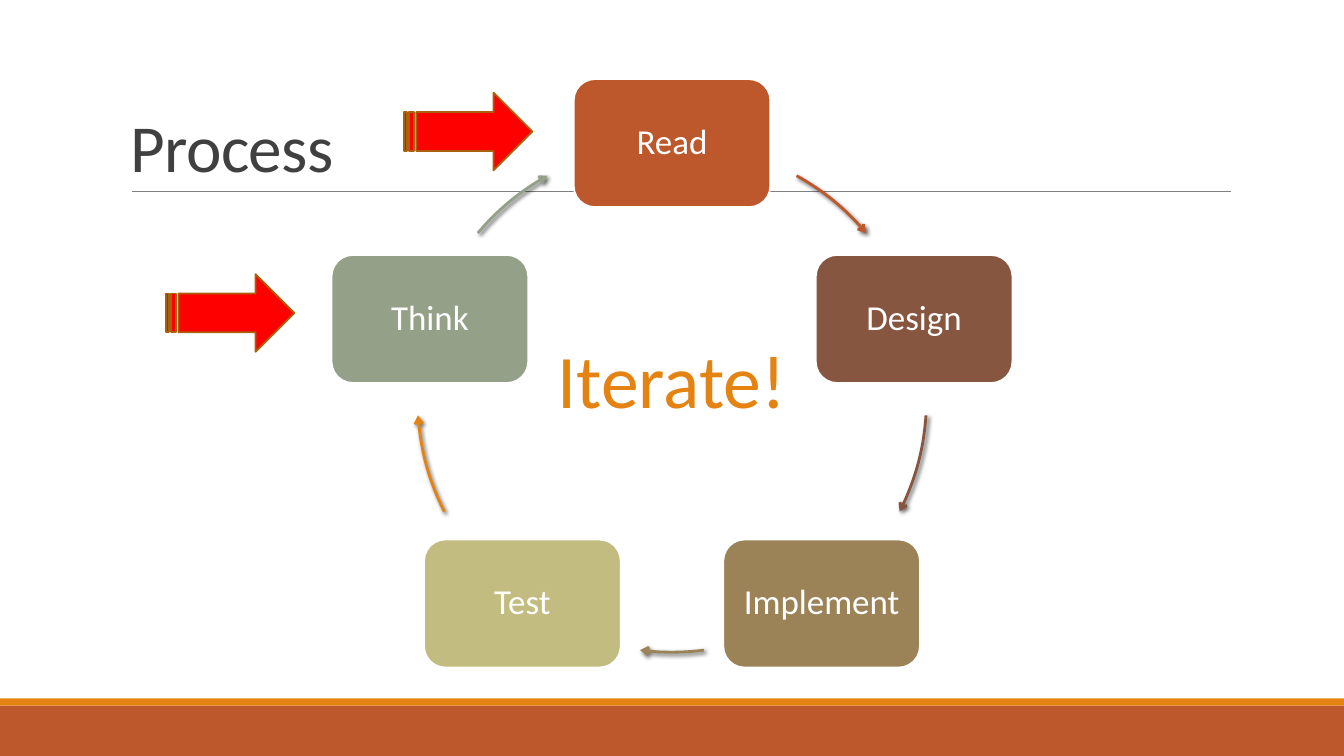
"""Build the Process slide: a five-step cycle with two marker arrows."""
from math import cos, radians, sin

from lxml import etree
from pptx import Presentation, util as u
from pptx.dml.color import RGBColor
from pptx.enum import shapes, text
from pptx.oxml import parse_xml
from pptx.oxml.ns import nsdecls, qn

PX = 9144
RUST = RGBColor(0xBD, 0x58, 0x2C)
BROWN = RGBColor(0x86, 0x56, 0x40)
TAN = RGBColor(0x9B, 0x83, 0x57)
OLIVE = RGBColor(0xC2, 0xBC, 0x80)
SAGE = RGBColor(0x94, 0xA0, 0x88)
ORANGE = RGBColor(0xE4, 0x83, 0x12)
RED = RGBColor(0xFF, 0x00, 0x00)
OCHRE = RGBColor(0xA9, 0x61, 0x0D)
GREY = RGBColor(0x80, 0x80, 0x80)
DARK = RGBColor(0x40, 0x40, 0x40)
WHITE = RGBColor(0xFF, 0xFF, 0xFF)
SHAPE = shapes.MSO_SHAPE
ALIGN = text.PP_ALIGN
ANCHOR = text.MSO_ANCHOR

deck = Presentation()
deck.slide_width, deck.slide_height = 1333 * PX, 750 * PX
slide = deck.slides.add_slide(deck.slide_layouts[6])
tree = slide.shapes


def draw(kind, box, fill, edge=None, width=1.25):
    """Add a shape; a missing fill or edge colour leaves that part clear."""
    shape = tree.add_shape(kind, *(round(n * PX) for n in box))
    shape.shadow.inherit = False
    if fill is None:
        shape.fill.background()
    else:
        shape.fill.solid()
        shape.fill.fore_color.rgb = fill
    if edge is None:
        shape.line.fill.background()
    else:
        shape.line.color.rgb = edge
        shape.line.width = u.Pt(width)
    return shape


def write(shape, words, size, color, align, anchor):
    """Put one styled paragraph in a shape and return it."""
    frame = shape.text_frame
    frame.vertical_anchor = anchor
    para = frame.paragraphs[0]
    para.text = words
    para.alignment = align
    para.font.name = "Calibri"
    para.font.size = u.Pt(size)
    para.font.color.rgb = color
    return para


draw(SHAPE.RECTANGLE, (0, 700, 1333, 50), RUST)
draw(SHAPE.RECTANGLE, (0, 693, 1333, 7), ORANGE)
rule = tree.add_connector(shapes.MSO_CONNECTOR.STRAIGHT,
                          131 * PX, 190 * PX, 1221 * PX, 190 * PX)
rule.line.color.rgb = GREY
rule.line.width = u.Pt(0.5)
etree.SubElement(rule._element.spPr, qn("a:effectLst"))

title = tree.add_textbox(120 * PX, 31 * PX, 1100 * PX, 159 * PX)
title.text_frame.word_wrap = True
para = write(title, "Process", 48, DARK, ALIGN.LEFT, ANCHOR.BOTTOM)
para.line_spacing = 0.85
para.font._element.set("spc", "-50")

LEFT, TOP, SPAN = 414, 142, 505
RADIUS = SPAN / 2
WIDE, HIGH = 195, 127
steps = [
    ("Read", RUST, RUST, 29.3, 49.7),
    ("Design", BROWN, BROWN, 94, 116.6),
    ("Implement", TAN, TAN, 172.8, 187.2),
    ("Test", OLIVE, ORANGE, 243.4, 266),
    ("Think", SAGE, SAGE, 310.3, 330.7),
]
for i, (name, fill, ink, start, end) in enumerate(steps):
    turn = radians(i * 360 / len(steps))
    left = LEFT + RADIUS * (1 + sin(turn)) - WIDE / 2
    top = TOP + RADIUS * (1 - cos(turn)) - HIGH / 2
    card = draw(SHAPE.ROUNDED_RECTANGLE, (left, top, WIDE, HIGH), fill, WHITE)
    frame = card.text_frame
    frame.word_wrap = True
    frame.margin_left = frame.margin_right = 10 * PX
    frame.margin_top = frame.margin_bottom = 10 * PX
    para = write(card, name, 25, WHITE, ALIGN.CENTER, ANCHOR.MIDDLE)
    para.line_spacing = 0.9

    arc = draw(SHAPE.ARC, (LEFT, TOP, SPAN, SPAN), None, ink, 2)
    for n, angle in enumerate((start, end)):
        arc.adjustments[n] = (angle - 90) % 360 * 0.6
    etree.SubElement(arc.line._get_or_add_ln(), qn("a:tailEnd"), type="arrow")
    arc._element.spPr.find(qn("a:effectLst")).append(parse_xml(
        f'<a:outerShdw {nsdecls("a")} blurRad="38100" dist="25400" dir="2700000">'
        '<a:srgbClr val="000000"><a:alpha val="60000"/></a:srgbClr></a:outerShdw>'))

label = tree.add_textbox(542 * PX, 325 * PX, 249 * PX, 101 * PX)
label.text_frame.word_wrap = False
write(label, "Iterate!", 54, ORANGE, ALIGN.CENTER, ANCHOR.TOP)

for left, top in ((401, 92), (165, 272)):
    draw(SHAPE.STRIPED_RIGHT_ARROW, (left, top, 127, 77), RED, OCHRE)

deck.save("out.pptx")
